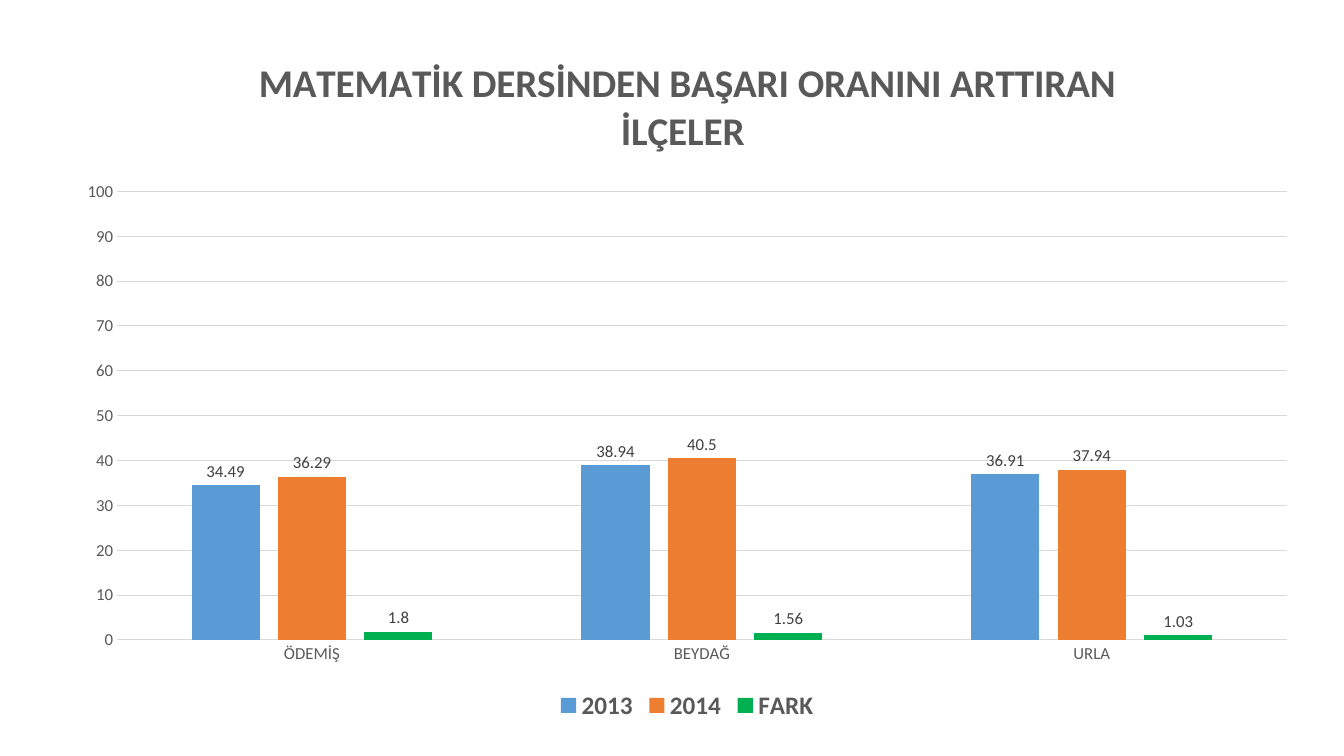
import pptx
import pptx.chart.data
import pptx.dml.color
import pptx.enum.chart
import pptx.util
from pptx.dml.color import RGBColor
from pptx.util import Inches, Pt

# Content
TITLE = "MATEMATİK DERSİNDEN BAŞARI ORANINI ARTTIRAN İLÇELER "
DISTRICTS = ["ÖDEMİŞ", "BEYDAĞ", "URLA"]
SERIES = [
    ("2013", (34.49, 38.94, 36.91), RGBColor(0x5B, 0x9B, 0xD5)),
    ("2014", (36.29, 40.5, 37.94), RGBColor(0xED, 0x7D, 0x31)),
    ("FARK", (1.8, 1.56, 1.03), RGBColor(0x00, 0xB0, 0x50)),
]

# Style
FONT = "Calibri"
TEXT = RGBColor(0x59, 0x59, 0x59)
LABEL = RGBColor(0x40, 0x40, 0x40)
GRID = RGBColor(0xD9, 0xD9, 0xD9)


def style_font(font, size, color, bold=False):
    font.name = FONT
    font.size = Pt(size)
    font.bold = bold
    font.color.rgb = color


def style_line(line):
    line.color.rgb = GRID
    line.width = Pt(0.75)


def add_district_chart(slide):
    data = pptx.chart.data.CategoryChartData()
    data.categories = DISTRICTS
    for name, values, _ in SERIES:
        data.add_series(name, values)
    chart = slide.shapes.add_chart(
        pptx.enum.chart.XL_CHART_TYPE.COLUMN_CLUSTERED,
        Inches(0.62), Inches(0.3), Inches(12.39), Inches(6.9), data,
    ).chart
    style_font(chart.font, 10, TEXT)

    # Title
    chart.has_title = True
    chart.chart_title.include_in_layout = False
    run = chart.chart_title.text_frame.paragraphs[0].add_run()
    run.text = TITLE
    style_font(run.font, 28, TEXT, bold=True)

    # Legend
    chart.has_legend = True
    chart.legend.position = pptx.enum.chart.XL_LEGEND_POSITION.BOTTOM
    chart.legend.include_in_layout = False
    style_font(chart.legend.font, 18, TEXT, bold=True)

    # Axes
    for axis in (chart.category_axis, chart.value_axis):
        axis.major_tick_mark = pptx.enum.chart.XL_TICK_MARK.NONE
        axis.minor_tick_mark = pptx.enum.chart.XL_TICK_MARK.NONE
        style_font(axis.tick_labels.font, 12, TEXT)
    style_line(chart.category_axis.format.line)
    chart.value_axis.format.line.fill.background()
    chart.value_axis.minimum_scale = 0
    chart.value_axis.maximum_scale = 100
    chart.value_axis.major_unit = 10
    chart.value_axis.has_major_gridlines = True
    style_line(chart.value_axis.major_gridlines.format.line)

    # Columns and value labels
    plot = chart.plots[0]
    plot.vary_by_categories = False
    plot.gap_width = 219
    plot.overlap = -27
    for series, (_, _, color) in zip(plot.series, SERIES):
        series.invert_if_negative = False
        series.format.fill.solid()
        series.format.fill.fore_color.rgb = color
        series.format.line.fill.background()
        labels = series.data_labels
        labels.show_value = True
        labels.position = pptx.enum.chart.XL_LABEL_POSITION.OUTSIDE_END
        style_font(labels.font, 12, LABEL)


def main():
    presentation = pptx.Presentation()
    presentation.slide_width = Inches(13.33)
    presentation.slide_height = Inches(7.5)
    slide = presentation.slides.add_slide(presentation.slide_layouts[6])
    add_district_chart(slide)
    presentation.save("out.pptx")


if __name__ == "__main__":
    main()
